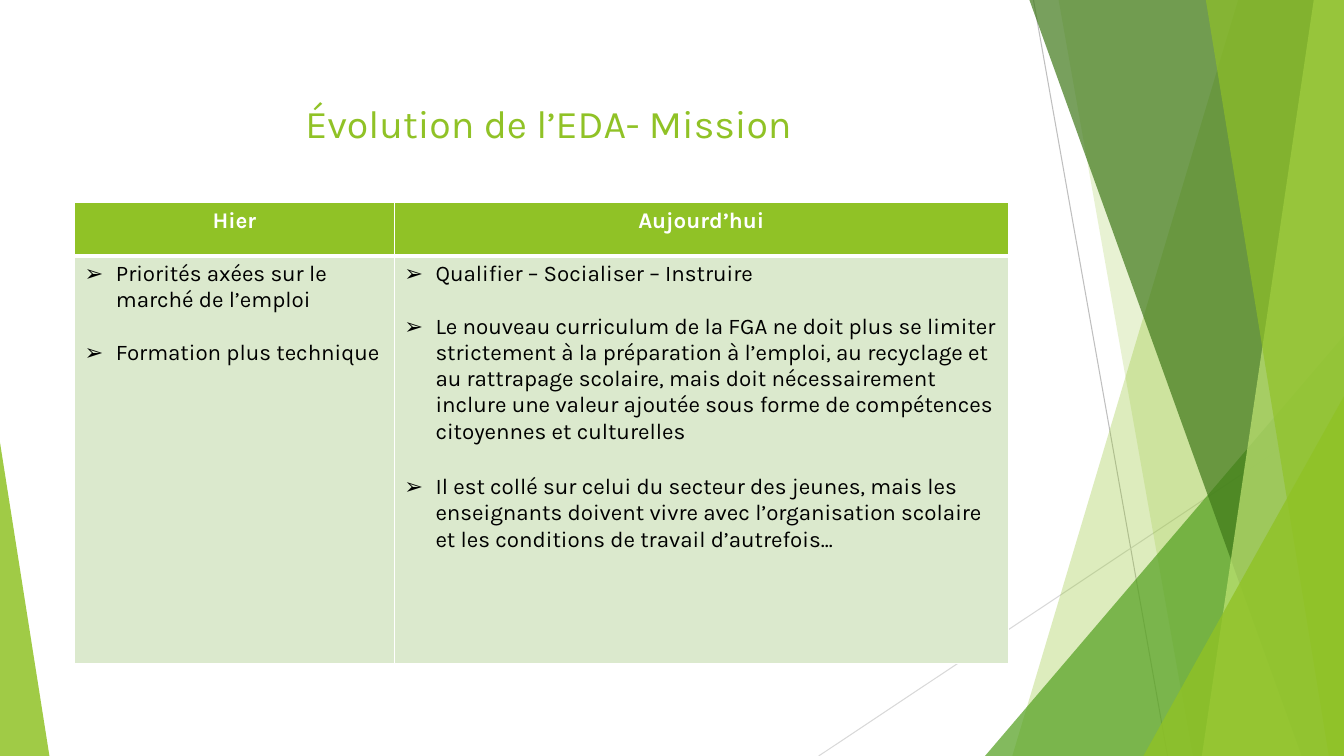
from lxml import etree
from pptx import Presentation
from pptx.dml.color import RGBColor
from pptx.enum.shapes import MSO_CONNECTOR, MSO_SHAPE
from pptx.enum.text import MSO_ANCHOR, PP_ALIGN
from pptx.oxml.ns import qn
from pptx.util import Inches, Pt

LINE = MSO_CONNECTOR.STRAIGHT
TRIANGLE = MSO_SHAPE.ISOSCELES_TRIANGLE
CENTER, LEFT = PP_ALIGN.CENTER, PP_ALIGN.LEFT
MIDDLE = MSO_ANCHOR.MIDDLE
W, H = 13.33, 7.5

COLORS = {
    "green": "90C226", "mid": "54A021", "dark": "3F7819", "lime": "C0E474",
    "pale": "DBE9CD", "gray": "BFBFBF", "light": "D9D9D9",
    "white": "FFFFFF", "black": "000000",
}
FONT = "Karla"
TITLE = {"size": Pt(28), "bold": False}
HEADER = {"size": Pt(16), "bold": True}
BODY = {"size": Pt(16), "bold": False}


def rgb(color):
    return RGBColor.from_string(COLORS[color])


class Slide:
    def __init__(self, prs):
        self.s = prs.slides.add_slide(prs.slide_layouts[5])

    def line(self, x1, y1, x2, y2, color):
        c = self.s.shapes.add_connector(LINE, *map(Inches, (x1, y1, x2, y2)))
        c.line.color.rgb = rgb(color)
        c.line.width = Pt(0.75)
        etree.SubElement(c._element.spPr, qn("a:effectLst"))

    def paint(self, shape, color, opacity):
        shape.shadow.inherit = False
        shape.line.fill.background()
        shape.fill.solid()
        shape.fill.fore_color.rgb = rgb(color)
        clr = shape._element.spPr.find(".//" + qn("a:srgbClr"))
        etree.SubElement(clr, qn("a:alpha"), val=str(opacity * 1000))

    def band(self, top, bottom, color, opacity):
        """Band reaching the right edge, with a slanted left side."""
        fb = self.s.shapes.build_freeform(Inches(top), 0, scale=1.0)
        corners = [(W, 0), (W, H), (bottom, H)]
        fb.add_line_segments([(Inches(x), Inches(y)) for x, y in corners])
        self.paint(fb.convert_to_shape(), color, opacity)

    def triangle(self, x, y, w, apex, color, opacity):
        """Triangle standing on the bottom edge."""
        box = map(Inches, (x, y, w, H - y))
        shape = self.s.shapes.add_shape(TRIANGLE, *box)
        shape.adjustments[0] = apex
        self.paint(shape, color, opacity)

    def add_text(self, p, text, style, color, align):
        p.alignment = align
        r = p.add_run()
        r.text = text
        r.font.name = FONT
        r.font.color.rgb = rgb(color)
        for name, value in style.items():
            setattr(r.font, name, value)

    def title(self, text, x, y, w, h):
        sp = self.s.shapes.title
        sp.left, sp.top, sp.width, sp.height = map(Inches, (x, y, w, h))
        tf = sp.text_frame
        tf.vertical_anchor = MIDDLE
        tf.margin_top = Inches(0.31)
        self.add_text(tf.paragraphs[0], text, TITLE, "green", CENTER)
        sp.element.getparent().append(sp.element)

    def bullet(self, p, gap):
        p.space_before = Pt(gap)
        pPr = p._p.get_or_add_pPr()
        pPr.set("marL", str(Inches(0.31)))
        pPr.set("indent", str(-Inches(0.31)))
        etree.SubElement(pPr, qn("a:buFont"), typeface="Arial")
        etree.SubElement(pPr, qn("a:buChar"), char="➢")

    def cell(self, cell, color, widths):
        cell.fill.solid()
        cell.fill.fore_color.rgb = rgb(color)
        tcPr = cell._tc.get_or_add_tcPr()
        for i, (side, width) in enumerate(zip("LRTB", widths)):
            ln = etree.Element(qn("a:ln" + side), w=str(Pt(width)))
            fill = etree.SubElement(ln, qn("a:solidFill"))
            etree.SubElement(fill, qn("a:srgbClr"), val=COLORS["white"])
            tcPr.insert(i, ln)

    def table(self, x, y, cols, rows, columns):
        box = map(Inches, (x, y, sum(cols), sum(rows)))
        table = self.s.shapes.add_table(len(rows), len(cols), *box).table
        table.horz_banding = False
        for row, height in zip(table.rows, rows):
            row.height = Inches(height)
        for i, (header, items) in enumerate(columns):
            table.columns[i].width = Inches(cols[i])
            head, body = table.cell(0, i), table.cell(1, i)
            self.cell(head, "green", (1, 1, 1, 3))
            self.cell(body, "pale", (1, 1, 3, 1))
            p = head.text_frame.paragraphs[0]
            self.add_text(p, header, HEADER, "white", CENTER)
            tf = body.text_frame
            for n, (text, gap) in enumerate(items):
                p = tf.add_paragraph() if n else tf.paragraphs[0]
                self.add_text(p, text, BODY, "black", LEFT)
                self.bullet(p, gap)


def main():
    prs = Presentation()
    prs.slide_width, prs.slide_height = Inches(W), Inches(H)
    s = Slide(prs)

    # Decorative facets, back to front
    s.line(10.25, 0, 11.58, H, "gray")
    s.line(W, 4.03, 8.12, H, "light")
    s.band(12.28, 10.04, "green", 30)
    s.band(10.5, 11.83, "green", 20)
    s.triangle(9.77, 3.33, 3.56, 1, "mid", 72)
    s.band(10.21, 12.91, "dark", 70)
    s.band(13.03, 11.92, "lime", 70)
    s.band(11.96, 13.18, "green", 65)
    s.triangle(11.34, 3.93, 1.99, 1, "green", 80)
    s.triangle(0, 4.39, 0.49, 0, "green", 85)

    # Title
    s.title("Évolution de l’EDA- Mission", 0.74, 0.67, 9.4, 0.84)

    # Comparison table: each item with the gap above it in points
    s.table(0.74, 2.01, [3.17, 6.09], [0.53, 4.04], [
        ("Hier", [
            ("Priorités axées sur le marché de l’emploi", 0),
            ("Formation plus technique", 19),
        ]),
        ("Aujourd’hui", [
            ("Qualifier – Socialiser – Instruire", 0),
            ("Le nouveau curriculum de la FGA ne doit plus se limiter "
             "strictement à la préparation à l’emploi, au recyclage et au "
             "rattrapage scolaire, mais doit nécessairement inclure une "
             "valeur ajoutée sous forme de compétences citoyennes et "
             "culturelles", 19),
            ("Il est collé sur celui du secteur des jeunes, mais les "
             "enseignants doivent vivre avec l’organisation scolaire et les "
             "conditions de travail d’autrefois...", 21),
        ]),
    ])

    prs.save("out.pptx")


if __name__ == "__main__":
    main()
